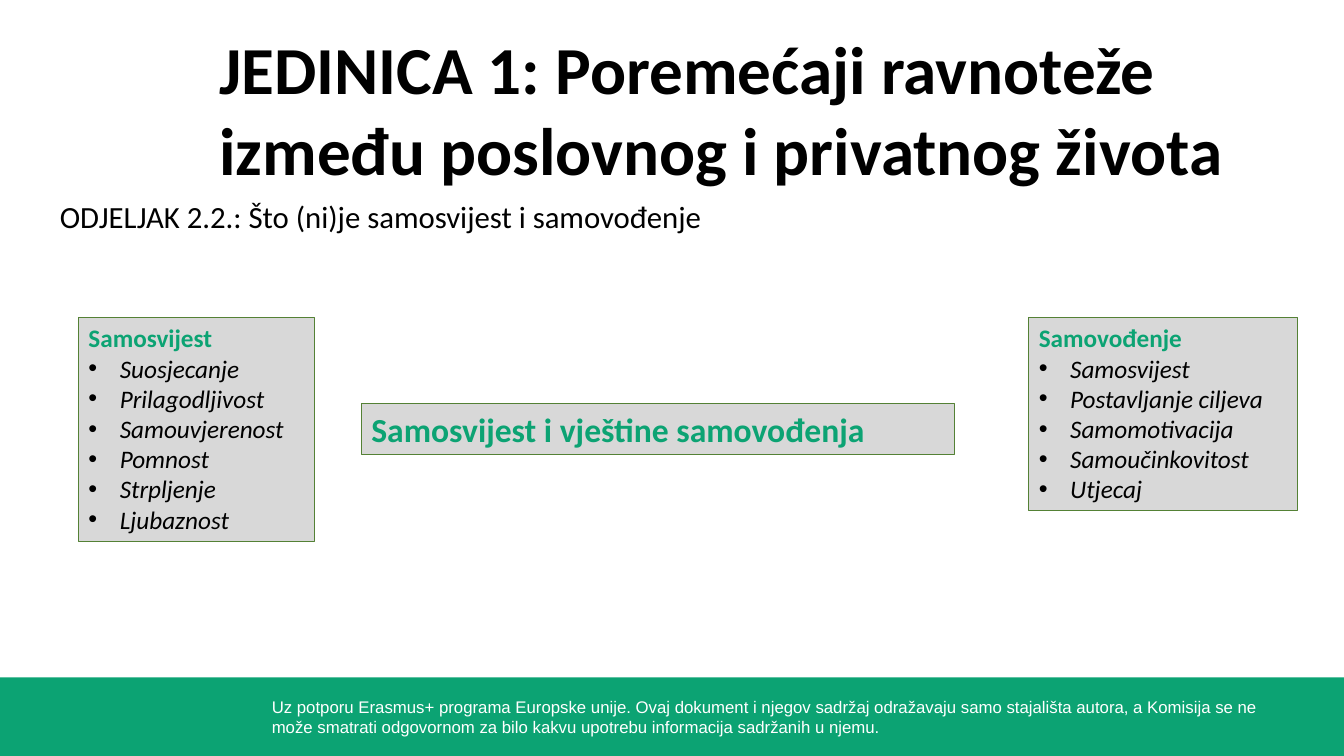
"""Build the slide on self-awareness and self-leadership skills."""
from lxml import etree
from pptx import Presentation
from pptx.dml.color import RGBColor
from pptx.enum import shapes, text
from pptx.oxml import ns
from pptx.util import Cm, Pt

GREEN, GREY, BORDER, BLACK, WHITE = "0CA373", "D8D8D8", "548135", "000000", "FFFFFF"


def rgb(value):
    return RGBColor.from_string(value)


def write(sp, lines, size, color, font="Calibri", bold=False, insets=(0.25, 0.13, 0.25, 0.13)):
    tf = sp.text_frame
    tf.word_wrap = True
    tf.vertical_anchor = text.MSO_ANCHOR.TOP
    tf.margin_left, tf.margin_top, tf.margin_right, tf.margin_bottom = map(Cm, insets)
    tf.text = "\n".join(lines)
    for i, p in enumerate(tf.paragraphs):
        p.alignment = text.PP_ALIGN.JUSTIFY if len(lines) > 1 else text.PP_ALIGN.LEFT
        if i:
            pPr = p._p.get_or_add_pPr()
            pPr.set("marL", str(Cm(0.79)))
            pPr.set("indent", str(-Cm(0.79)))
            buClr = etree.SubElement(pPr, ns.qn("a:buClr"))
            etree.SubElement(buClr, ns.qn("a:srgbClr"), val=BLACK)
            etree.SubElement(pPr, ns.qn("a:buFont"), typeface="Arial")
            etree.SubElement(pPr, ns.qn("a:buChar"), char="•")
        for r in p.runs:
            r.font.name, r.font.size = font, Pt(size)
            r.font.bold, r.font.italic = bold and not i, i > 0
            r.font.color.rgb = rgb(BLACK if i else color)


prs = Presentation()
prs.slide_width, prs.slide_height = Cm(33.87), Cm(19.05)
s = prs.slides.add_slide(prs.slide_layouts[6])

band = s.shapes.add_shape(shapes.MSO_SHAPE.RECTANGLE, 0, Cm(17.07), prs.slide_width, Cm(1.98))
band.shadow.inherit = False
band.fill.solid()
band.fill.fore_color.rgb = rgb(GREEN)
band.line.fill.background()

footer = s.shapes.add_textbox(Cm(6.6), Cm(17.42), Cm(26.47), Cm(1.27))
write(footer, ["Uz potporu Erasmus+ programa Europske unije. Ovaj dokument i njegov sadržaj "
               "odražavaju samo stajališta autora, a Komisija se ne može smatrati odgovornom "
               "za bilo kakvu upotrebu informacija sadržanih u njemu."], 12, WHITE, font="Arial")

title = s.shapes.add_textbox(Cm(5.5), Cm(0.66), Cm(28.9), Cm(2.08))
write(title, ["JEDINICA 1: Poremećaji ravnoteže između poslovnog i privatnog života"],
      48, BLACK, bold=True, insets=(0.03, 0.03, 0, 0))

subtitle = s.shapes.add_textbox(Cm(1.48), Cm(4.93), Cm(21.39), Cm(0.99))
write(subtitle, ["ODJELJAK 2.2.: Što (ni)je samosvijest i samovođenje"],
      22, BLACK, insets=(0.03, 0.05, 0, 0))

boxes = [
    (1.98, 8, 5.94, 5.64, 18, ["Samosvijest", "Suosjecanje", "Prilagodljivost", "Samouvjerenost",
                               "Pomnost", "Strpljenje", "Ljubaznost"]),
    (9.11, 10.17, 14.94, 1.28, 24, ["Samosvijest i vještine samovođenja"]),
    (25.93, 8, 6.78, 4.87, 18, ["Samovođenje", "Samosvijest", "Postavljanje ciljeva",
                                "Samomotivacija", "Samoučinkovitost", "Utjecaj"]),
]
for left, top, width, height, size, lines in boxes:
    sp = s.shapes.add_shape(shapes.MSO_SHAPE.RECTANGLE, Cm(left), Cm(top), Cm(width), Cm(height))
    sp.shadow.inherit = False
    sp.fill.solid()
    sp.fill.fore_color.rgb = rgb(GREY)
    sp.line.color.rgb = rgb(BORDER)
    sp.line.width = Pt(0.75)
    write(sp, lines, size, GREEN, bold=True)

prs.save("out.pptx")
